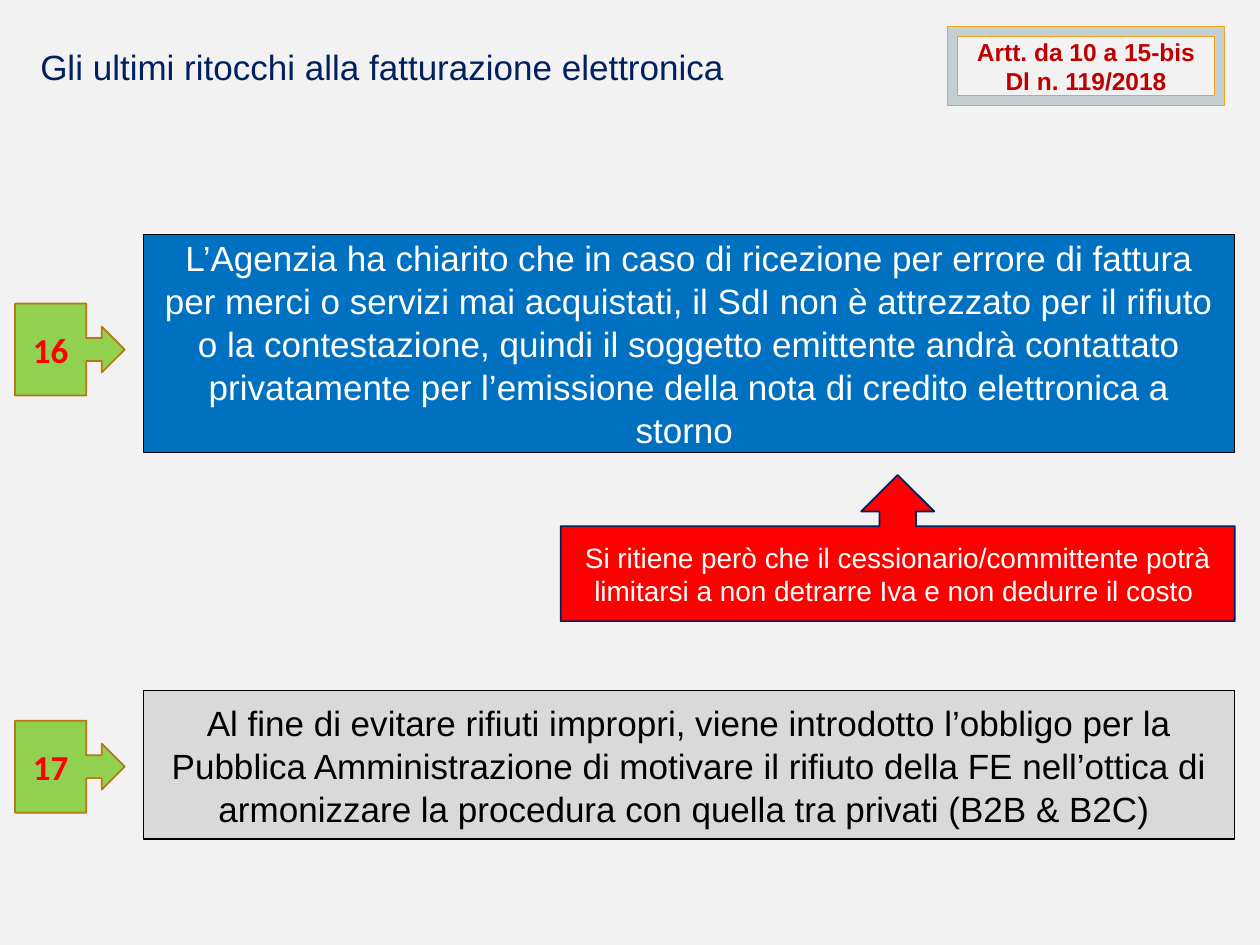
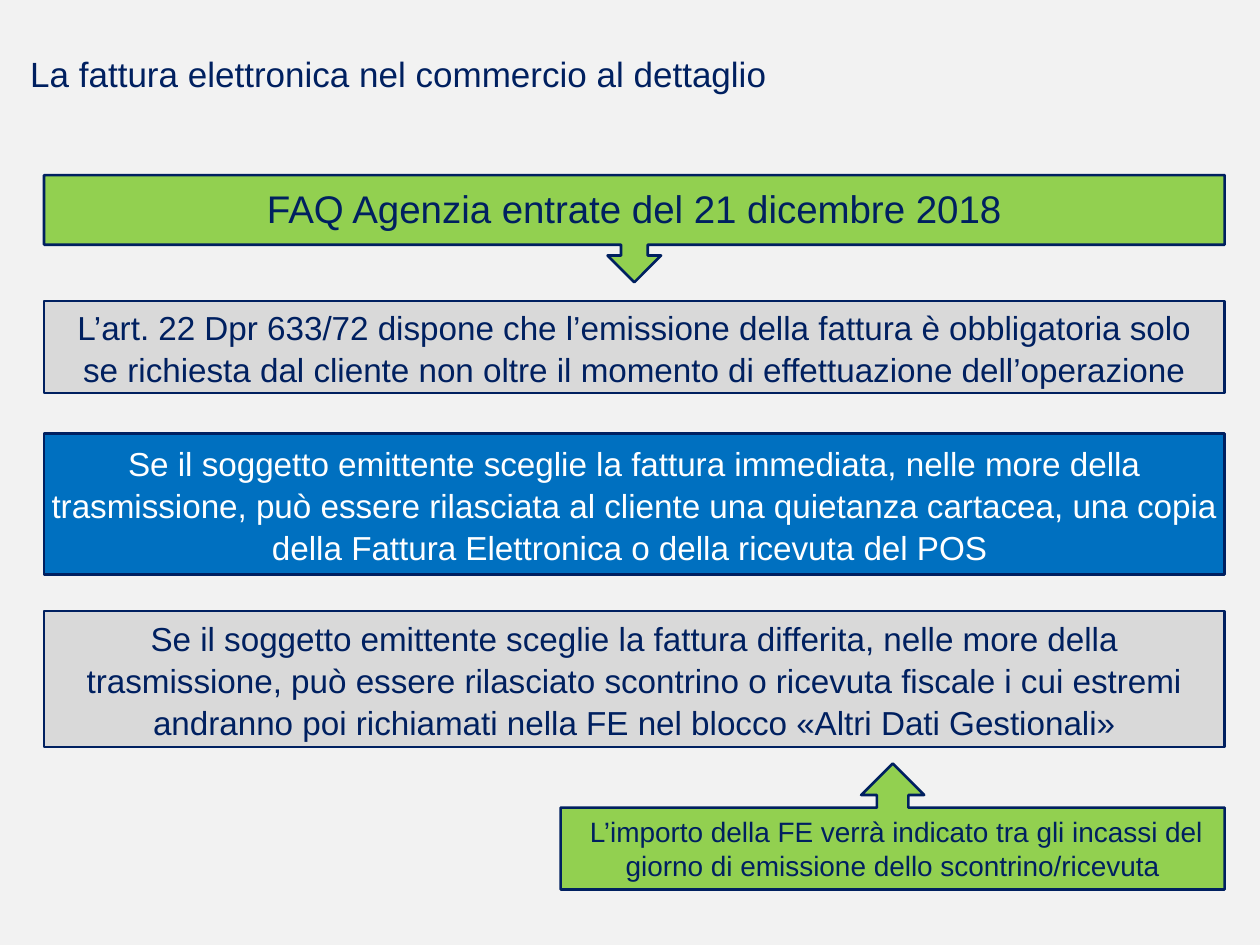
from pptx import Presentation
from pptx.dml.color import RGBColor
from pptx.enum.shapes import MSO_SHAPE
from pptx.enum.text import MSO_ANCHOR, MSO_AUTO_SIZE, PP_ALIGN
from pptx.util import Inches, Pt

NAVY, BLUE, GREEN, GREY = "002060", "0070C0", "92D050", "D9D9D9"
RED, WHITE, BLACK, BACKGROUND = "FF0000", "FFFFFF", "000000", "F2F2F2"

# Slide 1: numbered points as (number, text, top, height, tag top, fill, text colour)
REFINEMENTS_TITLE = "Gli ultimi ritocchi alla fatturazione elettronica"
LAW_REFERENCE = "Artt. da 10 a 15-bis Dl n. 119/2018"
POINTS = [
    ("16", "L’Agenzia ha chiarito che in caso di ricezione per errore di fattura per merci "
           "o servizi mai acquistati, il SdI non è attrezzato per il rifiuto o la "
           "contestazione, quindi il soggetto emittente andrà contattato privatamente per "
           "l’emissione della nota di credito elettronica a storno ",
     1.86, 1.73, 2.41, BLUE, WHITE),
    ("17", "Al fine di evitare rifiuti impropri, viene introdotto l’obbligo per la Pubblica "
           "Amministrazione di motivare il rifiuto della FE nell’ottica di armonizzare la "
           "procedura con quella tra privati (B2B & B2C) ",
     5.48, 1.18, 5.72, GREY, BLACK),
]
COST_REMARK = ("Si ritiene però che il cessionario/committente potrà limitarsi a non detrarre "
               "Iva e non dedurre il costo ")

# Slide 2: rules as (text, top, height, fill, text colour, inset)
RETAIL_TITLE = "La fattura elettronica nel commercio al dettaglio"
FAQ_HEADING = "FAQ Agenzia entrate del 21 dicembre 2018"
RULES = [
    ("L’art. 22 Dpr 633/72 dispone che l’emissione della fattura è obbligatoria solo se "
     "richiesta dal cliente non oltre il momento di effettuazione dell’operazione",
     2.39, 0.73, GREY, NAVY, None),
    ("Se il soggetto emittente sceglie la fattura immediata, nelle more della trasmissione, "
     "può essere rilasciata al cliente una quietanza cartacea, una copia della Fattura "
     "Elettronica o della ricevuta del POS ",
     3.44, 1.12, BLUE, WHITE, 0.01),
    ("Se il soggetto emittente sceglie la fattura differita, nelle more della trasmissione, "
     "può essere rilasciato scontrino o ricevuta fiscale i cui estremi andranno poi "
     "richiamati nella FE nel blocco «Altri Dati Gestionali»",
     4.85, 1.08, GREY, NAVY, None),
]
RECEIPT_REMARK = (" L’importo della FE verrà indicato tra gli incassi del giorno di emissione "
                  "dello scontrino/ricevuta")

TAG_LEFT, TAG_WIDTH, TAG_HEIGHT = 0.12, 0.87, 0.73
POINT_LEFT, POINT_RIGHT = 1.14, 9.8
RULE_LEFT, RULE_WIDTH = 0.35, 9.37
REMARK_LEFT = 4.45


def rgb(hex_colour):
    return RGBColor.from_string(hex_colour)


def write(frame, text, size, colour, font="Arial", bold=False, align=PP_ALIGN.CENTER,
          spacing=None):
    frame.word_wrap = True
    frame.vertical_anchor = MSO_ANCHOR.MIDDLE
    paragraph = frame.paragraphs[0]
    paragraph.text = text
    paragraph.alignment = align
    if spacing:
        paragraph.line_spacing = Pt(spacing)
    for run in paragraph.runs:
        run.font.name, run.font.size, run.font.bold = font, Pt(size), bold
        run.font.color.rgb = rgb(colour)


def add_box(slide, kind, place, fill, line, line_width, text, size, colour, inset=None,
            **style):
    """Add a filled, outlined preset shape; inset, when given, applies to all four sides."""
    box = slide.shapes.add_shape(kind, *map(Inches, place))
    box.shadow.inherit = False
    box.fill.solid()
    box.fill.fore_color.rgb = rgb(fill)
    box.line.color.rgb = rgb(line)
    box.line.width = Pt(line_width)
    frame = box.text_frame
    if inset is not None:
        frame.margin_left = frame.margin_right = Inches(inset)
        frame.margin_top = frame.margin_bottom = Inches(inset)
    write(frame, text, size, colour, **style)


def add_titled_slide(deck, title, left, top, width):
    slide = deck.slides.add_slide(deck.slide_layouts[6])
    slide.background.fill.solid()
    slide.background.fill.fore_color.rgb = rgb(BACKGROUND)
    frame = slide.shapes.add_textbox(*map(Inches, (left, top, width, 0.45))).text_frame
    frame.margin_left = frame.margin_right = Inches(0.12)
    frame.margin_top = frame.margin_bottom = Inches(0.06)
    write(frame, title, 20, NAVY, align=PP_ALIGN.JUSTIFY)
    frame.auto_size = MSO_AUTO_SIZE.SHAPE_TO_FIT_TEXT
    return slide


def build_refinements(deck):
    slide = add_titled_slide(deck, REFINEMENTS_TITLE, 0.2, 0.3, 6.3)
    for number, text, top, height, tag_top, fill, colour in POINTS:
        add_box(slide, MSO_SHAPE.RIGHT_ARROW_CALLOUT,
                (TAG_LEFT, tag_top, TAG_WIDTH, TAG_HEIGHT),
                GREEN, "B67815", 1, number, 20, RED, font="Calibri", bold=True)
        add_box(slide, MSO_SHAPE.RECTANGLE,
                (POINT_LEFT, top, POINT_RIGHT - POINT_LEFT, height),
                fill, BLACK, 0.75, text, 20, colour, spacing=24.6)
    add_box(slide, MSO_SHAPE.UP_ARROW_CALLOUT,
            (REMARK_LEFT, 3.77, POINT_RIGHT - REMARK_LEFT, 1.16),
            RED, NAVY, 1, COST_REMARK, 16, WHITE)
    add_box(slide, MSO_SHAPE.FRAME, (7.52, 0.21, 2.2, 0.63),
            "C3CFD3", "F6A21D", 0.75, LAW_REFERENCE, 14, "C00000", bold=True)


def build_retail(deck):
    slide = add_titled_slide(deck, RETAIL_TITLE, 0.12, 0.36, 6.54)
    for text, top, height, fill, colour, inset in RULES:
        add_box(slide, MSO_SHAPE.RECTANGLE, (RULE_LEFT, top, RULE_WIDTH, height),
                fill, NAVY, 1.5, text, 19, colour, inset=inset, spacing=24)
    add_box(slide, MSO_SHAPE.DOWN_ARROW_CALLOUT, (RULE_LEFT, 1.39, RULE_WIDTH, 0.85),
            GREEN, NAVY, 1.5, FAQ_HEADING, 22, NAVY, spacing=24)
    add_box(slide, MSO_SHAPE.UP_ARROW_CALLOUT,
            (REMARK_LEFT, 6.06, RULE_LEFT + RULE_WIDTH - REMARK_LEFT, 1),
            GREEN, NAVY, 1.5, RECEIPT_REMARK, 16, NAVY)


def main():
    deck = Presentation()
    deck.slide_width, deck.slide_height = Inches(10), Inches(7.5)
    build_refinements(deck)
    build_retail(deck)
    deck.save("out.pptx")


if __name__ == "__main__":
    main()
